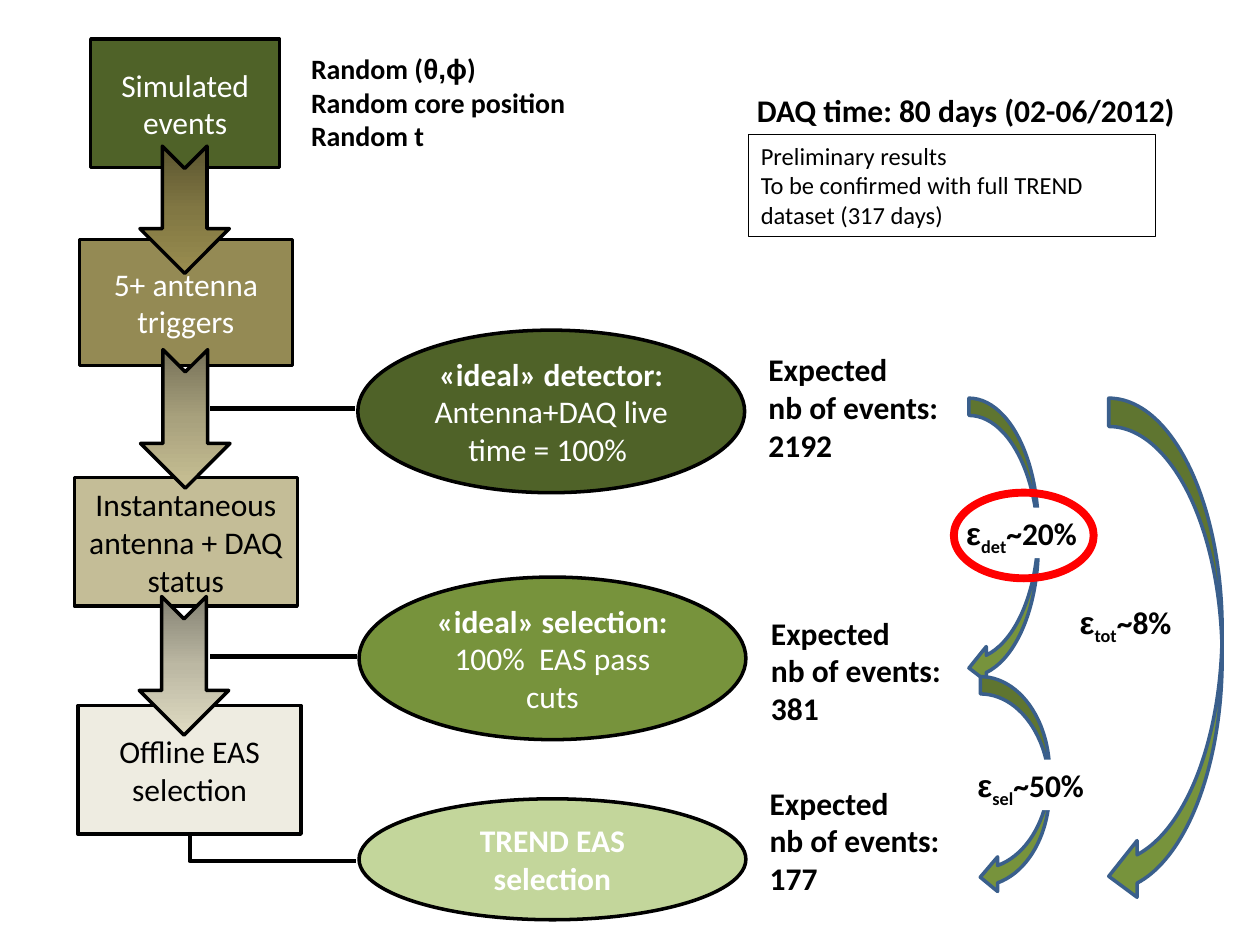
from copy import deepcopy

from pptx import Presentation
from pptx import util as u
from pptx.dml.color import RGBColor
from pptx.enum import shapes, text
from pptx.oxml import ns
from pptx.oxml.xmlchemy import OxmlElement

BLACK = RGBColor(0x00, 0x00, 0x00)
WHITE = RGBColor(0xFF, 0xFF, 0xFF)
RED = RGBColor(0xFF, 0x00, 0x00)
DARK_GREEN = RGBColor(0x4F, 0x62, 0x28)
GREEN = RGBColor(0x77, 0x93, 0x3C)
PALE_GREEN = RGBColor(0xC3, 0xD6, 0x9B)
OLIVE = RGBColor(0x94, 0x8A, 0x54)
TAN = RGBColor(0xC4, 0xBD, 0x97)
CREAM = RGBColor(0xEE, 0xEC, 0xE1)
BLUE = RGBColor(0x3A, 0x5F, 0x8C)
SHAPE = shapes.MSO_SHAPE

deck = Presentation()
deck.slide_width, deck.slide_height = u.Inches(10), u.Inches(7.5)
page = deck.slides.add_slide(deck.slide_layouts[6])


def add_block(kind, place, fill, line=BLACK, width=2):
    """Add a preset shape; a fill of None leaves it hollow."""
    block = page.shapes.add_shape(kind, *map(u.Inches, place))
    block.shadow.inherit = False
    if fill is None:
        block.fill.background()
    else:
        block.fill.solid()
        block.fill.fore_color.rgb = fill
    block.line.color.rgb = line
    block.line.width = u.Pt(width)
    return block


def write(box, lines, size=18, color=BLACK, bold=False, align=text.PP_ALIGN.LEFT):
    """Fill a box with paragraphs, each a list of (text, run font settings)."""
    frame = box.text_frame
    for index, pieces in enumerate(lines):
        para = frame.add_paragraph() if index else frame.paragraphs[0]
        para.alignment = align
        para.font.size = u.Pt(size)
        para.font.name = "Calibri"
        para.font.bold = bold
        para.font.color.rgb = color
        for words, settings in pieces:
            span = para.add_run()
            span.text = words
            for name, value in settings.items():
                setattr(span.font, name, value)


# Process steps and detector cases
steps = [
    (SHAPE.RECTANGLE, (0.72, 0.31, 1.5, 1.02), DARK_GREEN, WHITE, [("Simulated events", {})]),
    (SHAPE.RECTANGLE, (0.63, 1.9, 1.69, 1), OLIVE, WHITE, [("5+ antenna triggers", {})]),
    (SHAPE.RECTANGLE, (0.59, 3.79, 1.77, 1.02), TAN, BLACK,
     [("Instantaneous antenna + DAQ status", {})]),
    (SHAPE.RECTANGLE, (0.62, 5.6, 1.77, 1.02), CREAM, BLACK, [("Offline EAS selection", {})]),
    (SHAPE.OVAL, (2.84, 2.62, 3.07, 1.29), DARK_GREEN, WHITE,
     [("«ideal» detector: ", {"bold": True}), ("Antenna+DAQ live time = 100% ", {})]),
    (SHAPE.OVAL, (2.85, 4.58, 3.07, 1.29), GREEN, WHITE,
     [("«ideal» selection: ", {"bold": True}), ("100%  EAS pass cuts", {})]),
    (SHAPE.OVAL, (2.85, 6.34, 3.07, 0.96), PALE_GREEN, WHITE,
     [("TREND EAS selection", {"bold": True})]),
]
for kind, place, fill, color, pieces in steps:
    step = add_block(kind, place, fill)
    step.text_frame.word_wrap = True
    step.text_frame.vertical_anchor = text.MSO_ANCHOR.MIDDLE
    write(step, [pieces], color=color, align=text.PP_ALIGN.CENTER)

# Links from the process to the cases
links = [
    (shapes.MSO_CONNECTOR.STRAIGHT, (1.67, 3.24, 2.82, 3.24), 3),
    (shapes.MSO_CONNECTOR.STRAIGHT, (1.67, 5.21, 2.83, 5.21), 3),
    (shapes.MSO_CONNECTOR.ELBOW, (2.27, 6.07, 2.06, 7.39), 2.25),
]
for kind, ends, width in links:
    link = page.shapes.add_connector(kind, *map(u.Inches, ends))
    link.line.color.rgb = BLACK
    link.line.width = u.Pt(width)
    properties = link._element.spPr
    properties.append(OxmlElement("a:effectLst"))
    if kind == shapes.MSO_CONNECTOR.ELBOW:
        # A single bend, turned a quarter so that it runs down and then right
        properties.find(ns.qn("a:prstGeom")).set("prst", "bentConnector2")
        properties.find(ns.qn("a:xfrm")).set("rot", "16200000")

# Block arrows between the steps, shaded along their length
arrows = [
    ((0.96, 1.31, 1.01, 0.71), ("5A542F", "817743", "998D4F")),
    ((0.92, 2.97, 1.1, 0.71), ("767158", "A8A17D", "C8C094")),
    ((0.91, 4.93, 1.1, 0.71), ("848273", "BCB8A3", "DFDBC2")),
]
for place, shades in arrows:
    arrow = add_block(SHAPE.NOTCHED_RIGHT_ARROW, place, WHITE)
    arrow.rotation = 90
    arrow.fill.gradient()
    arrow.fill.gradient_angle = 0
    stop_list = arrow._element.spPr.find(ns.qn("a:gradFill")).find(ns.qn("a:gsLst"))
    stop_list.insert(1, deepcopy(stop_list[0]))
    for stop, position, shade in zip(arrow.fill.gradient_stops, (0, 0.5, 1), shades):
        stop.position = position
        stop.color.rgb = RGBColor.from_string(shade)

# Efficiency arrows
for place in [(7.69, 3.16, 0.55, 2.28), (7.78, 5.37, 0.55, 1.73), (8.8, 3.16, 0.9, 4.02)]:
    add_block(SHAPE.CURVED_LEFT_ARROW, place, GREEN, BLUE)

# Efficiency labels
labels = [
    ((7.57, 4.03, 1.11, 0.4), "det", "~20%"),
    ((7.66, 6.03, 1.07, 0.4), "sel", "~50%"),
    ((8.47, 4.74, 0.96, 0.4), "tot", "~8%"),
]
for place, subscript, value in labels:
    label = page.shapes.add_textbox(*map(u.Inches, place))
    label.fill.solid()
    label.fill.fore_color.rgb = WHITE
    write(label, [[("ε", {"name": "Arial"}), (subscript, {}), (value, {})]], bold=True)
    lowered = label.text_frame.paragraphs[0].runs[1]
    lowered.font._element.set("baseline", "-25000")

# Captions
captions = [
    ((5.91, 0.67, 3.6, 0.4), 18, [[("DAQ time: 80 days (02-06/2012)", {})]]),
    ((2.37, 0.36, 2.25, 0.91), 16,
     [[("Random (", {}), ("θ,ϕ", {"name": "Arial"}), (")", {})],
      [("Random core position", {})], [("Random t", {})]]),
]
for left, top, count in [(6, 2.73, "2192"), (6.02, 4.82, "381"), (6.01, 6.17, "177")]:
    lines = [[(words, {})] for words in ("Expected", "nb of events:", count)]
    captions.append(((left, top, 1.62, 1.01), 18, lines))
for place, size, lines in captions:
    caption = page.shapes.add_textbox(*map(u.Inches, place))
    write(caption, lines, size=size, bold=True)

notice = page.shapes.add_textbox(*map(u.Inches, (5.94, 1.07, 3.23, 0.81)))
notice.text_frame.word_wrap = True
notice.line.color.rgb = BLACK
notice.line.width = u.Pt(0.75)
write(notice, [[("Preliminary results", {})],
               [("To be confirmed with full TREND dataset (317 days)", {})]], size=14)

add_block(SHAPE.OVAL, (7.57, 3.91, 1.11, 0.68), None, RED, 4.5)

deck.save("out.pptx")
